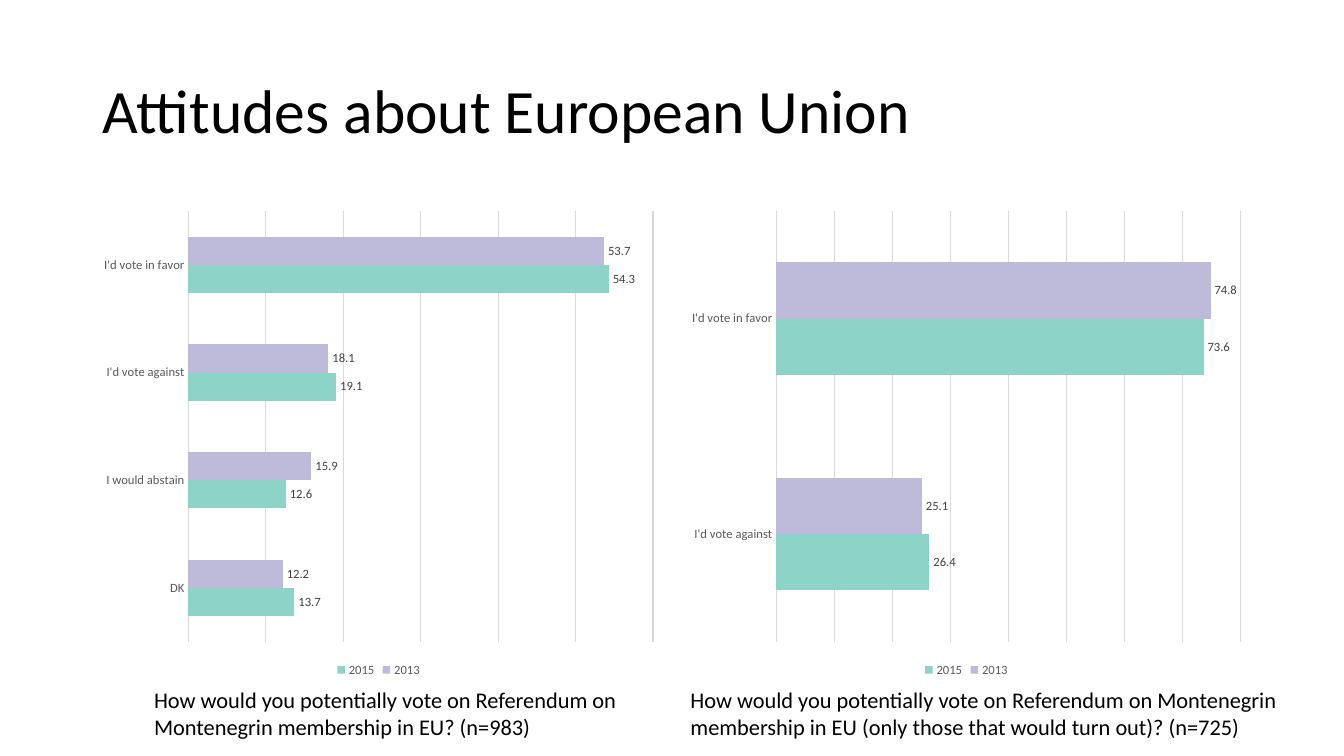
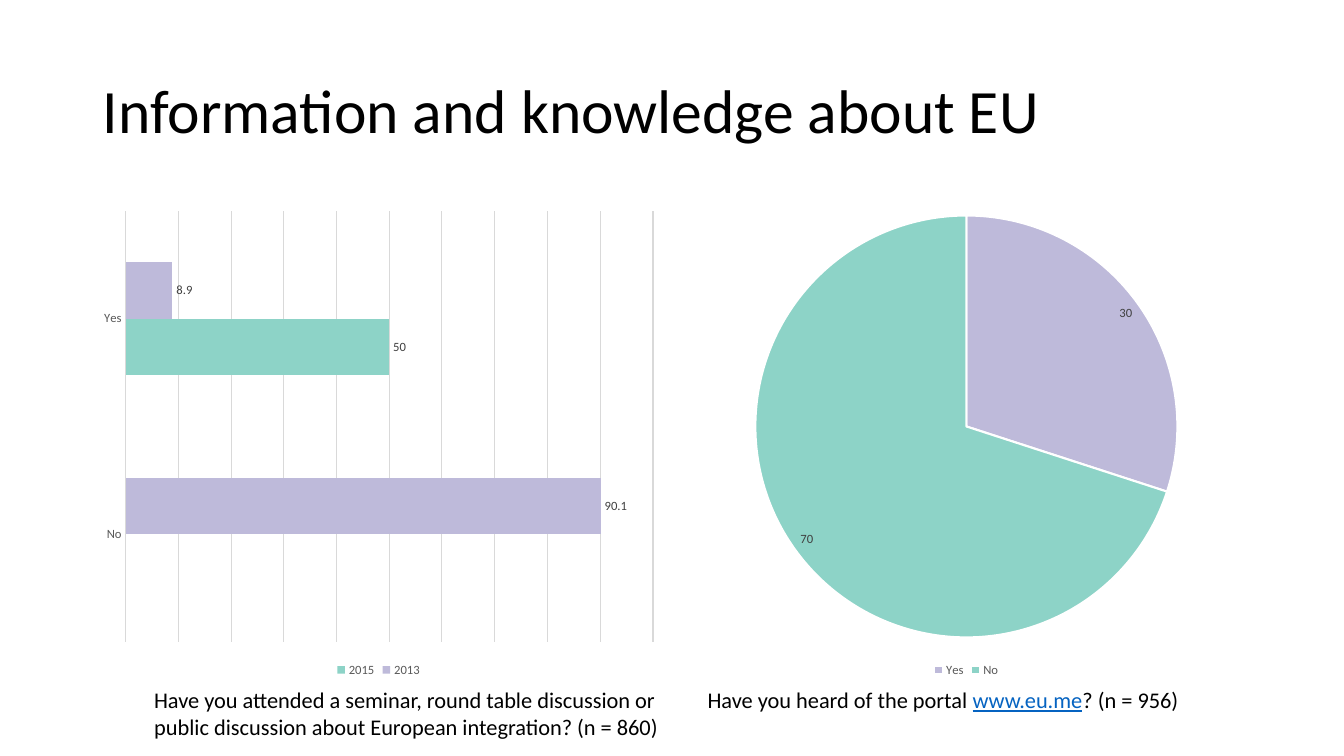
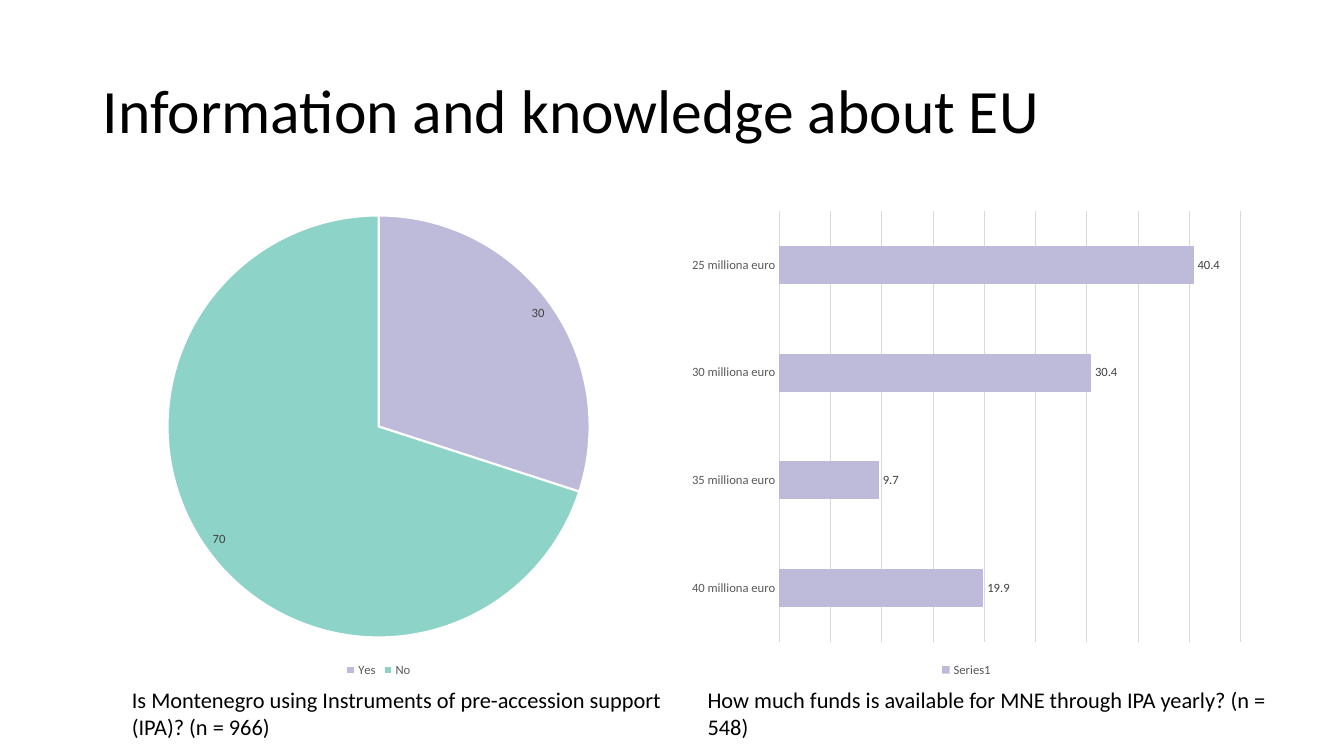
"""Build three slides of survey charts on attitudes to and knowledge of the European Union."""
from pptx import Presentation
from pptx.chart.data import CategoryChartData
from pptx.dml.color import RGBColor
from pptx.enum.chart import XL_CHART_TYPE, XL_LABEL_POSITION, XL_LEGEND_POSITION, XL_TICK_MARK
from pptx.enum.text import MSO_ANCHOR, MSO_AUTO_SIZE, PP_ALIGN
from pptx.util import Inches, Pt

BAR, PIE = XL_CHART_TYPE.BAR_CLUSTERED, XL_CHART_TYPE.PIE
OUTSIDE, INSIDE = XL_LABEL_POSITION.OUTSIDE_END, XL_LABEL_POSITION.INSIDE_END
BOTTOM = XL_LEGEND_POSITION.BOTTOM
NO_TICK = XL_TICK_MARK.NONE
MIDDLE, LEFT = MSO_ANCHOR.MIDDLE, PP_ALIGN.LEFT
GROW, NO_FIT = MSO_AUTO_SIZE.SHAPE_TO_FIT_TEXT, MSO_AUTO_SIZE.NONE

BLACK, WHITE, GRID = "000000", "FFFFFF", "D9D9D9"
AXIS_TEXT, LABEL_TEXT, LINK = "595959", "404040", "0563C1"
LILAC, TEAL = "BEBADA", "8DD3C7"
TITLE_LEFT, TITLE_TOP, TITLE_WIDTH, TITLE_HEIGHT = 0.92, 0.4, 11.5, 1.45
CHART_LEFTS, CHART_TOP, CHART_WIDTH, CHART_HEIGHT = (0.92, 6.75), 2, 5.67, 4.76
CAPTION_TOP = 6.76


def color(hex_value):
    return RGBColor.from_string(hex_value)


def style_font(font, size, hex_value):
    for name, value in {"name": "Calibri", "size": Pt(size), "bold": False}.items():
        setattr(font, name, value)
    font.color.rgb = color(hex_value)


yes_no_pie = {"type": PIE, "categories": ["Yes", "No"], "series": {"Series 1": [30, 70]}}
slides = [
    ("Attitudes about European Union", [
        {"type": BAR, "maximum": 60, "step": 10,
         "categories": ["I'd vote in favor", "I'd vote against", "I would abstain", "DK"],
         "series": {"2013": [53.7, 18.1, 15.9, 12.2], "2015": [54.3, 19.1, 12.6, 13.7]},
         "caption": (1.43, 5.32, 0.64, [
             "How would you potentially vote on Referendum on Montenegrin membership in EU? (n=983)"])},
        {"type": BAR, "maximum": 80, "step": 10,
         "categories": ["I'd vote in favor", "I'd vote against"],
         "series": {"2013": [74.8, 25.1], "2015": [73.6, 26.4]},
         "caption": (6.75, 6.19, 0.64, [
             "How would you potentially vote on Referendum on Montenegrin membership in EU "
             "(only those that would turn out)? (n=725)"])},
    ]),
    ("Information and knowledge about EU", [
        {"type": BAR, "maximum": 100, "step": 10, "categories": ["Yes", "No"],
         "series": {"2013": [8.9, 90.1], "2015": [50, None]},
         "caption": (1.43, 5.32, 0.64, [
             "Have you attended a seminar, round table discussion or public discussion "
             "about European integration? (n = 860)"])},
        {**yes_no_pie,
         "caption": (6.92, 5.86, 0.37, ["Have you heard of the portal ", "www.eu.me", "? (n = 956)"])},
    ]),
    ("Information and knowledge about EU", [
        {**yes_no_pie,
         "caption": (1.21, 5.93, 0.64, [
             "Is Montenegro using Instruments of pre-accession support (IPA)? (n = 966)"])},
        {"type": BAR, "maximum": 45, "step": 5,
         "categories": [f"{amount} milliona euro" for amount in (25, 30, 35, 40)],
         "series": {"Series1": [40.4, 30.4, 9.7, 19.9]},
         "caption": (6.92, 5.86, 0.64, [
             "How much funds is available for MNE through IPA yearly? (n = 548)"])},
    ]),
]

presentation = Presentation()
presentation.slide_width, presentation.slide_height = Inches(13.33), Inches(7.5)
title_only = presentation.slide_layouts[5]

for title_text, panels in slides:
    slide = presentation.slides.add_slide(title_only)
    title = slide.shapes.title
    title.left, title.top = Inches(TITLE_LEFT), Inches(TITLE_TOP)
    title.width, title.height = Inches(TITLE_WIDTH), Inches(TITLE_HEIGHT)
    frame = title.text_frame
    frame.text = title_text
    for name, value in {"vertical_anchor": MIDDLE, "word_wrap": True, "auto_size": NO_FIT}.items():
        setattr(frame, name, value)
    paragraph = frame.paragraphs[0]
    paragraph.alignment, paragraph.line_spacing = LEFT, 0.9
    style_font(paragraph.runs[0].font, 44, BLACK)

    for panel, chart_left in zip(panels, CHART_LEFTS):
        left, width, height, texts = panel["caption"]
        caption = slide.shapes.add_textbox(Inches(left), Inches(CAPTION_TOP), Inches(width), Inches(height))
        caption.text_frame.word_wrap = True
        caption.text_frame.auto_size = GROW
        for text in texts:
            run = caption.text_frame.paragraphs[0].add_run()
            run.text = text
            is_address = text.startswith("www.")
            style_font(run.font, 16, LINK if is_address else BLACK)
            run.font.underline = is_address

        data = CategoryChartData()
        data.categories = panel["categories"]
        for name, values in panel["series"].items():
            data.add_series(name, values)
        chart = slide.shapes.add_chart(
            panel["type"], Inches(chart_left), Inches(CHART_TOP),
            Inches(CHART_WIDTH), Inches(CHART_HEIGHT), data).chart
        style_font(chart.font, 10, BLACK)
        chart.has_title = False
        chart.has_legend = True
        chart.legend.position = BOTTOM
        chart.legend.include_in_layout = False
        style_font(chart.legend.font, 9, AXIS_TEXT)

        is_pie = panel["type"] == PIE
        plot = chart.plots[0]
        plot.vary_by_categories = is_pie
        for series, fill_color in zip(plot.series, (LILAC, TEAL)):
            labels = series.data_labels
            labels.show_value = True
            labels.position = INSIDE if is_pie else OUTSIDE
            style_font(labels.font, 9, LABEL_TEXT)
            if not is_pie:
                series.format.fill.solid()
                series.format.fill.fore_color.rgb = color(fill_color)
                series.invert_if_negative = False

        if is_pie:
            for index, fill_color in enumerate((LILAC, TEAL)):
                point_format = plot.series[0].points[index].format
                point_format.fill.solid()
                point_format.fill.fore_color.rgb = color(fill_color)
                point_format.line.color.rgb = color(WHITE)
                point_format.line.width = Pt(1.5)
        else:
            plot.gap_width = 182
            category_axis, value_axis = chart.category_axis, chart.value_axis
            category_axis.reverse_order = True
            category_axis.major_tick_mark = NO_TICK
            style_font(category_axis.tick_labels.font, 9, AXIS_TEXT)
            for name, value in {"visible": False, "has_major_gridlines": True, "minimum_scale": 0,
                                "maximum_scale": panel["maximum"], "major_unit": panel["step"]}.items():
                setattr(value_axis, name, value)
            for line in (category_axis.format.line, value_axis.major_gridlines.format.line):
                line.color.rgb = color(GRID)
                line.width = Pt(0.75)

presentation.save("out.pptx")
